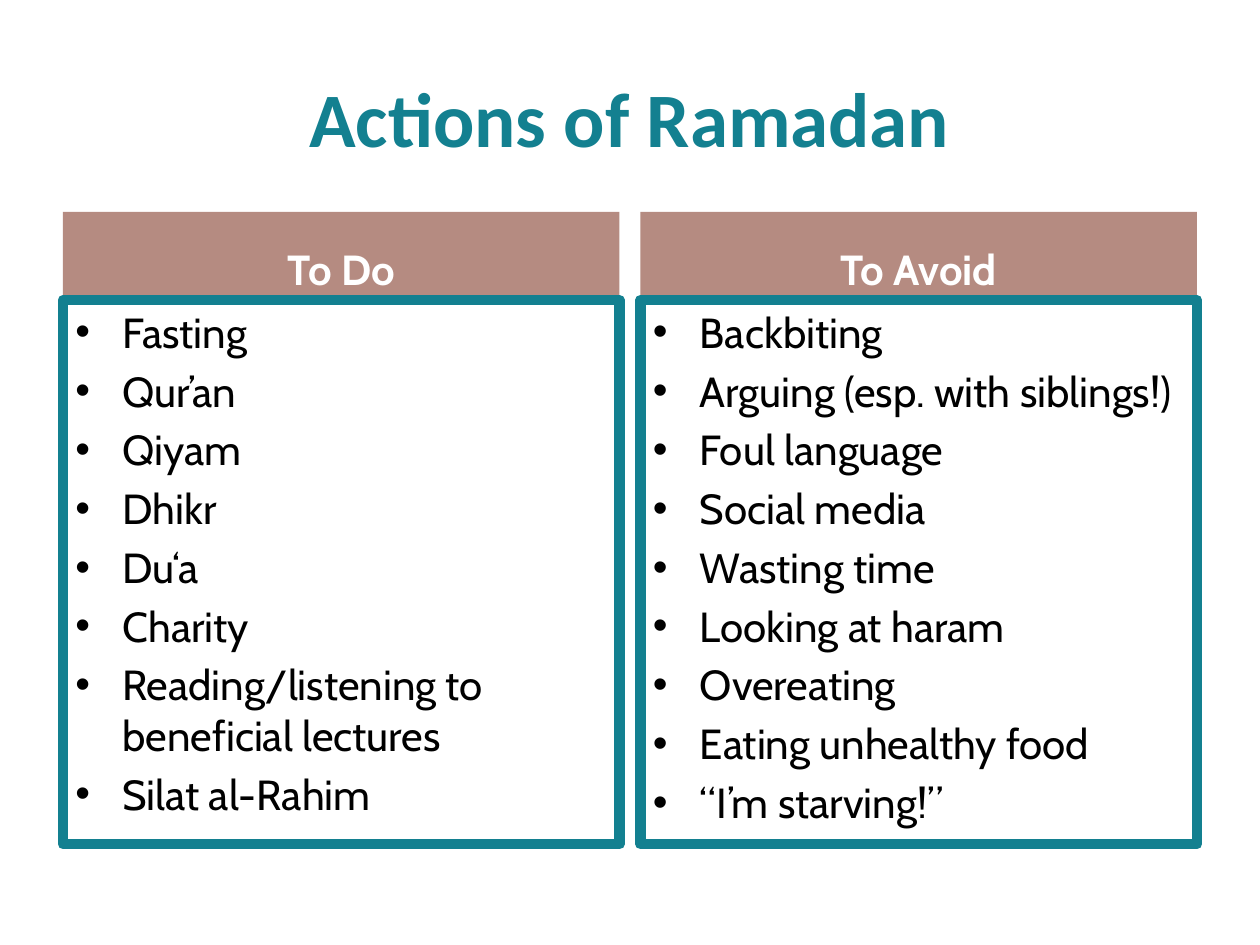
"""Build a slide that sets actions to do beside actions to avoid."""
from dataclasses import dataclass

from lxml.etree import SubElement
from pptx import Presentation
from pptx.dml.color import RGBColor as Rgb
from pptx.enum.shapes import MSO_SHAPE as Shape
from pptx.enum.text import MSO_ANCHOR as Anchor, PP_ALIGN as Align
from pptx.oxml.ns import qn
from pptx.util import Cm, Pt

TITLE = "Actions of Ramadan"
LISTS = {
    "To Do": [
        "Fasting",
        "Qur’an",
        "Qiyam",
        "Dhikr",
        "Du‘a",
        "Charity",
        "Reading/listening to beneficial lectures",
        "Silat al-Rahim",
    ],
    "To Avoid": [
        "Backbiting",
        "Arguing (esp. with siblings!)",
        "Foul language",
        "Social media",
        "Wasting time",
        "Looking at haram",
        "Overeating",
        "Eating unhealthy food",
        "“I’m starving!”",
    ],
}


@dataclass(frozen=True)
class Theme:
    """Hold the colours, fonts and type sizes."""
    teal: Rgb = Rgb(0x13, 0x80, 0x90)
    rose: Rgb = Rgb(0xB5, 0x8B, 0x81)
    white: Rgb = Rgb(0xFF, 0xFF, 0xFF)
    black: Rgb = Rgb(0, 0, 0)
    head: str = "Calibri"
    body: str = "Cabin"
    big: Pt = Pt(44)
    size: Pt = Pt(24)
    space: Pt = Pt(4.8)
    edge: Pt = Pt(6)


THEME = Theme()
WIDE, HIGH = Cm(25.4), Cm(19.05)
SIDE, GAP = Cm(1.27), Cm(0.42)
TOP, BAND, DEPTH = Cm(4.27), Cm(1.78), Cm(10.97)
INDENT = Cm(0.95)


def write(shape, lines, face, size, color, bold, align, anchor):
    """Fill a shape with evenly styled paragraphs."""
    frame = shape.text_frame
    frame.word_wrap = True
    frame.vertical_anchor = anchor
    frame.text = "\n".join(lines)
    for num, para in enumerate(frame.paragraphs):
        para.alignment = align
        if num:
            para.space_before = THEME.space
        for run in para.runs:
            font = run.font
            font.name, font.size, font.bold = face, size, bold
            font.color.rgb = color


def add_box(slide, left, top, width, height):
    """Add a plain rectangle with no shadow."""
    box = slide.shapes.add_shape(Shape.RECTANGLE, left, top, width, height)
    box.shadow.inherit = False
    return box


def add_dots(frame):
    """Give every paragraph a hanging bullet."""
    for para in frame.paragraphs:
        props = para._p.get_or_add_pPr()
        props.set("marL", str(INDENT))
        props.set("indent", str(-INDENT))
        SubElement(props, qn("a:buFont"), typeface="Arial")
        SubElement(props, qn("a:buChar"), char="•")


def add_list(slide, left, width, head, items):
    """Add one headed column."""
    band = add_box(slide, left, TOP, width, BAND)
    band.fill.solid()
    band.fill.fore_color.rgb = THEME.rose
    band.line.fill.background()
    write(band, [head], THEME.body, THEME.size, THEME.white, True,
          Align.CENTER, Anchor.BOTTOM)

    box = add_box(slide, left, TOP + BAND, width, DEPTH)
    box.fill.background()
    box.line.color.rgb = THEME.teal
    box.line.width = THEME.edge
    write(box, items, THEME.body, THEME.size, THEME.black, False,
          Align.LEFT, Anchor.TOP)
    add_dots(box.text_frame)


def main():
    """Build and save the slide."""
    deck = Presentation()
    deck.slide_width, deck.slide_height = WIDE, HIGH
    slide = deck.slides.add_slide(deck.slide_layouts[6])
    title = slide.shapes.add_textbox(SIDE, Cm(0.76), WIDE - 2 * SIDE, Cm(3.18))
    write(title, [TITLE], THEME.head, THEME.big, THEME.teal, True,
          Align.CENTER, Anchor.MIDDLE)
    count = len(LISTS)
    width = (WIDE - 2 * SIDE - (count - 1) * GAP) // count
    for col, (head, items) in enumerate(LISTS.items()):
        add_list(slide, SIDE + col * (width + GAP), width, head, items)
    deck.save("out.pptx")


if __name__ == "__main__":
    main()
